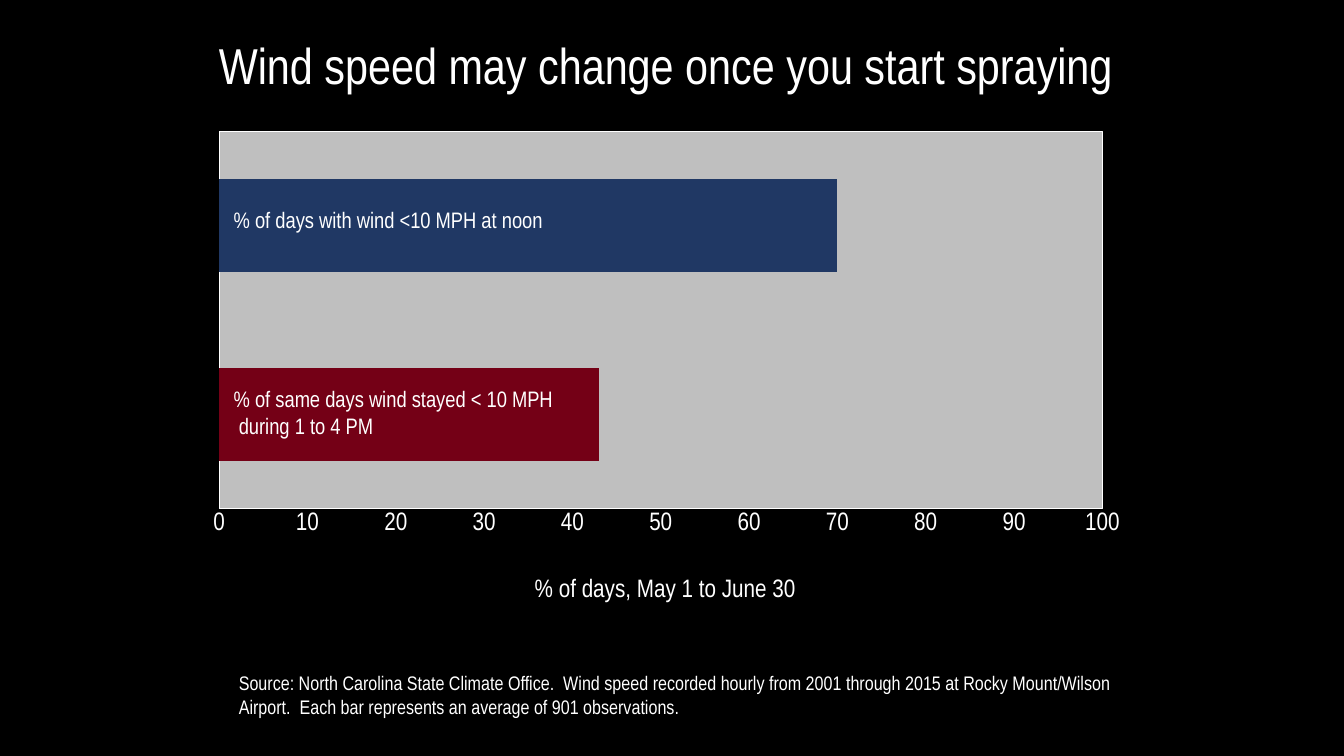
from dataclasses import dataclass

from lxml import etree
from pptx import Presentation
from pptx.chart.data import CategoryChartData
from pptx.dml.color import RGBColor as RGB
from pptx.enum.chart import XL_CHART_TYPE as ChartType, XL_TICK_MARK as TickMark
from pptx.enum.text import MSO_ANCHOR as Anchor, MSO_AUTO_SIZE as AutoSize
from pptx.oxml import parse_xml
from pptx.oxml.ns import nsdecls, qn
from pptx.util import Inches, Pt


@dataclass(frozen=True)
class Theme:
    font: str = "Arial Narrow"
    background: RGB = RGB.from_string("000000")
    text: RGB = RGB.from_string("FFFFFF")
    plot: RGB = RGB.from_string("BFBFBF")
    noon: RGB = RGB.from_string("203864")
    afternoon: RGB = RGB.from_string("740016")
    title_size: int = 36
    axis_size: int = 18
    label_size: int = 16
    source_size: int = 14


theme = Theme()


def style_font(font, size):
    font.name, font.size, font.bold = theme.font, Pt(size), False
    font.color.rgb = theme.text


def write(text, box, size=theme.label_size, placeholder=None,
          anchor=Anchor.TOP, spacing=1.0):
    """Put text in a new text box, or in the given placeholder."""
    left, top, width, height = map(Inches, box)
    holder = placeholder or slide.shapes.add_textbox(left, top, width, height)
    holder.left, holder.top, holder.width, holder.height = left, top, width, height
    frame = holder.text_frame
    frame.word_wrap, frame.auto_size = True, AutoSize.NONE
    frame.vertical_anchor = anchor
    paragraph = frame.paragraphs[0]
    paragraph.text = text
    paragraph.alignment = 1  # left
    paragraph.line_spacing = spacing
    for run in paragraph.runs:
        style_font(run.font, size)


# Slide
deck = Presentation()
deck.slide_width, deck.slide_height = Inches(13.33), Inches(7.5)
slide = deck.slides.add_slide(deck.slide_layouts[5])
slide.background.fill.solid()
slide.background.fill.fore_color.rgb = theme.background

# Title
write("Wind speed may change once you start spraying", (2.07, 0.2, 9.17, 0.95),
      size=theme.title_size, placeholder=slide.shapes.title,
      anchor=Anchor.MIDDLE, spacing=0.9)

# Bar chart
wind_days = CategoryChartData()
wind_days.categories = ["1", "2"]
wind_days.add_series("Series 1", (43, 70))
chart = slide.shapes.add_chart(
    ChartType.BAR_CLUSTERED, Inches(1.96), Inches(1.15),
    Inches(9.29), Inches(5.03), wind_days).chart
chart.has_legend = chart.has_title = False
style_font(chart.font, theme.axis_size)

bars = chart.plots[0]
bars.gap_width = 104
bars.vary_by_categories = False
for index, color in enumerate((theme.afternoon, theme.noon)):
    fill = bars.series[0].points[index].format.fill
    fill.solid()
    fill.fore_color.rgb = color

# Axes
chart.category_axis.visible = False
chart.category_axis.has_major_gridlines = False
days_axis = chart.value_axis
days_axis.minimum_scale, days_axis.maximum_scale = 0, 100
days_axis.major_unit = 10
days_axis.has_major_gridlines = False
days_axis.major_tick_mark = days_axis.minor_tick_mark = TickMark.NONE
days_axis.format.line.fill.background()
style_font(days_axis.tick_labels.font, theme.axis_size)
days_title = days_axis.axis_title
days_title.text_frame.text = "% of days, May 1 to June 30"
style_font(days_title.text_frame.paragraphs[0].runs[0].font, theme.axis_size)


def layout(**shares):
    """Manual layout element, in shares of the chart's size."""
    target = '<c:layoutTarget val="inner"/>' if "w" in shares else ""
    modes = "".join(f'<c:{key}Mode val="edge"/>' for key in "xy")
    sizes = "".join(f'<c:{key} val="{share}"/>' for key, share in shares.items())
    return parse_xml(f'<c:layout {nsdecls("c")}><c:manualLayout>{target}{modes}'
                     f'{sizes}</c:manualLayout></c:layout>')


# Places of the plot and its axis title
plot_area = bars.series[0]._element.getparent().getparent()
for parent, position, place in (
        (plot_area, 0, layout(x=0.023, y=0.03, w=0.943, h=0.745)),
        (days_title._element, 1, layout(x=0.355, y=0.9))):
    for old in parent.findall(qn("c:layout")):
        parent.remove(old)
    parent.insert(position, place)

# Grey plot with a thin white frame
frame_xml = parse_xml(
    f'<c:spPr {nsdecls("c", "a")}>'
    f'<a:solidFill><a:srgbClr val="{theme.plot}"/></a:solidFill>'
    f'<a:ln w="9525"><a:solidFill><a:srgbClr val="{theme.text}"/></a:solidFill></a:ln>'
    '</c:spPr>')
etree.strip_elements(plot_area, qn("c:dTable"))
plot_area.append(frame_xml)

# Source and bar labels
write("Source: North Carolina State Climate Office.  Wind speed recorded hourly "
      "from 2001 through 2015 at Rocky Mount/Wilson Airport.  Each bar represents "
      "an average of 901 observations.", (2.27, 6.61, 8.98, 0.57),
      size=theme.source_size)
write("% of days with wind <10 MPH at noon", (2.22, 2, 3.47, 0.37))
write("% of same days wind stayed < 10 MPH\v during 1 to 4 PM",
      (2.22, 3.77, 3.63, 0.64))

deck.save("out.pptx")
